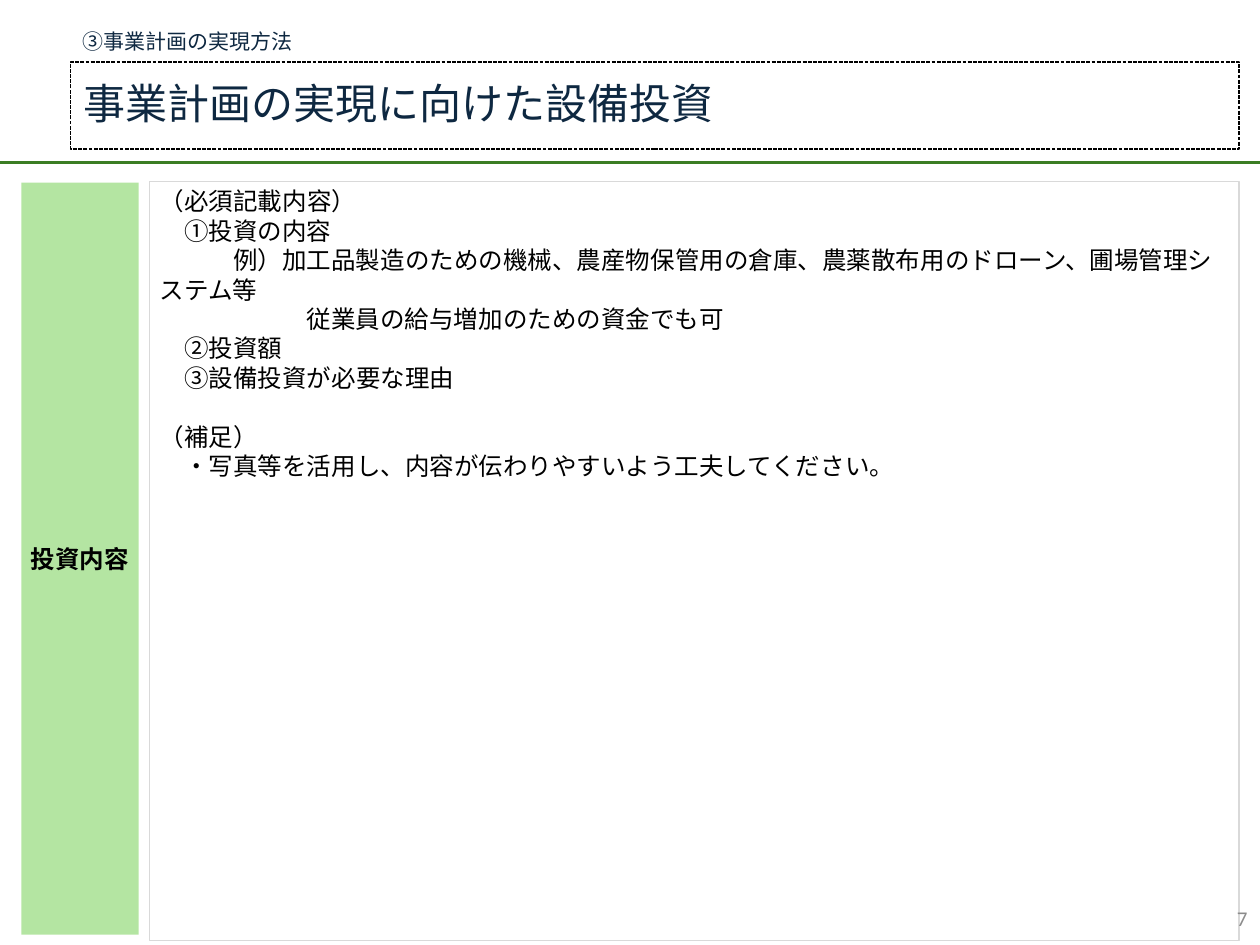
import pptx
import pptx.dml.color
import pptx.enum.dml
import pptx.enum.shapes
import pptx.enum.text
import pptx.oxml.ns
import pptx.util
from lxml import etree

Pt = pptx.util.Pt
ALIGN = pptx.enum.text.PP_ALIGN
ANCHOR = pptx.enum.text.MSO_ANCHOR
JP, LATIN = "Noto Sans CJK JP", "Calibri"
NAVY, BLACK, WHITE, GREY = "0E2841", "000000", "FFFFFF", "8C8C8C"
GREEN, PALE_GREEN, BORDER = "3B7D23", "B4E5A2", "D9D9D9"

SECTION = "③事業計画の実現方法"
TITLE = "事業計画の実現に向けた設備投資"
LABEL = "投資内容"
PAGE = "7"
BODY_SIZE, BODY_LINE = 14, 16.8
# text, first-line indent in characters, blank lines before
BODY = [
    ("（必須記載内容）", 0, 0),
    ("①投資の内容", 1, 0),
    ("例）加工品製造のための機械、農産物保管用の倉庫、農薬散布用のドローン、圃場管理システム等", 3, 0),
    ("従業員の給与増加のための資金でも可", 6, 0),
    ("②投資額", 1, 0),
    ("③設備投資が必要な理由", 1, 0),
    ("（補足）", 0, 1),
    ("・写真等を活用し、内容が伝わりやすいよう工夫してください。", 1, 0),
]


def rgb(value):
    return pptx.dml.color.RGBColor.from_string(value)


def place(sp, left, top, width, height):
    sp.left, sp.top, sp.width, sp.height = map(Pt, (left, top, width, height))


def paint(sp, fill, line=None):
    sp.fill.solid()
    sp.fill.fore_color.rgb = rgb(fill)
    if line:
        sp.line.color.rgb = rgb(line)
        sp.line.width = Pt(0.75)
    else:
        sp.line.fill.background()


def frame(sp, anchor, side=7.2, edge=3.6):
    """Set wrapping, anchor and insets of a shape's text."""
    tf = sp.text_frame
    tf.word_wrap = True
    tf.auto_size = pptx.enum.text.MSO_AUTO_SIZE.NONE
    tf.vertical_anchor = anchor
    tf.margin_left = tf.margin_right = Pt(side)
    tf.margin_top = tf.margin_bottom = Pt(edge)
    return tf


def write(p, text, size, color, align=ALIGN.LEFT, name=JP, bold=False, spacing=None):
    p.text = text
    p.alignment = align
    p.line_spacing = spacing
    font = p.font
    font.size, font.bold, font.name = Pt(size), bold, name
    font.color.rgb = rgb(color)
    ea = etree.Element(pptx.oxml.ns.qn("a:ea"), typeface=name)
    font._element.find(pptx.oxml.ns.qn("a:latin")).addnext(ea)


def plain_indent(p, indent):
    """Remove the bullet and indent only the first line."""
    pPr = p._p.get_or_add_pPr()
    pPr.set("marL", "0")
    pPr.set("indent", str(Pt(indent)))
    none = etree.Element(pptx.oxml.ns.qn("a:buNone"))
    pPr.find(pptx.oxml.ns.qn("a:defRPr")).addprevious(none)


prs = pptx.Presentation()
prs.slide_width, prs.slide_height = Pt(720), Pt(540)
s = prs.slides.add_slide(prs.slide_layouts[1])
title, body = s.placeholders

rule = s.shapes.add_connector(
    pptx.enum.shapes.MSO_CONNECTOR.STRAIGHT, 0, Pt(92.9), prs.slide_width, Pt(92.9))
rule.line.color.rgb = rgb(GREEN)
rule.line.width = Pt(2)
etree.SubElement(rule._element.spPr, pptx.oxml.ns.qn("a:effectLst"))

place(body, 85.5, 103.6, 622.5, 434)
paint(body, WHITE, BORDER)
tf = frame(body, ANCHOR.TOP, 5.8, 2.9)
for i, (text, indent, blanks) in enumerate(BODY):
    p = tf.add_paragraph() if i else tf.paragraphs[0]
    write(p, text, BODY_SIZE, BLACK, spacing=Pt(BODY_LINE))
    p.space_before = Pt(blanks * BODY_LINE)
    plain_indent(p, indent * BODY_SIZE)

place(title, 40.3, 35.5, 667.7, 49.7)
paint(title, WHITE, BLACK)
title.line.dash_style = pptx.enum.dml.MSO_LINE.SQUARE_DOT
write(frame(title, ANCHOR.MIDDLE).paragraphs[0], TITLE, 24, NAVY, spacing=0.9)

section = s.shapes.add_textbox(Pt(40.3), Pt(14.4), Pt(210), Pt(19.4))
write(frame(section, ANCHOR.TOP).paragraphs[0], SECTION, 12, NAVY, spacing=0.9)

label = s.shapes.add_shape(
    pptx.enum.shapes.MSO_SHAPE.RECTANGLE, Pt(12.2), Pt(104.4), Pt(67), Pt(429.8))
label.shadow.inherit = False
paint(label, PALE_GREEN)
write(frame(label, ANCHOR.MIDDLE, 2.9, 2.9).paragraphs[0],
      LABEL, 14, BLACK, ALIGN.CENTER, bold=True)

page = s.shapes.add_textbox(Pt(558), Pt(510.5), Pt(162), Pt(28.8))
write(frame(page, ANCHOR.MIDDLE).paragraphs[0], PAGE, 12, GREY, ALIGN.RIGHT, LATIN)

prs.save("out.pptx")
